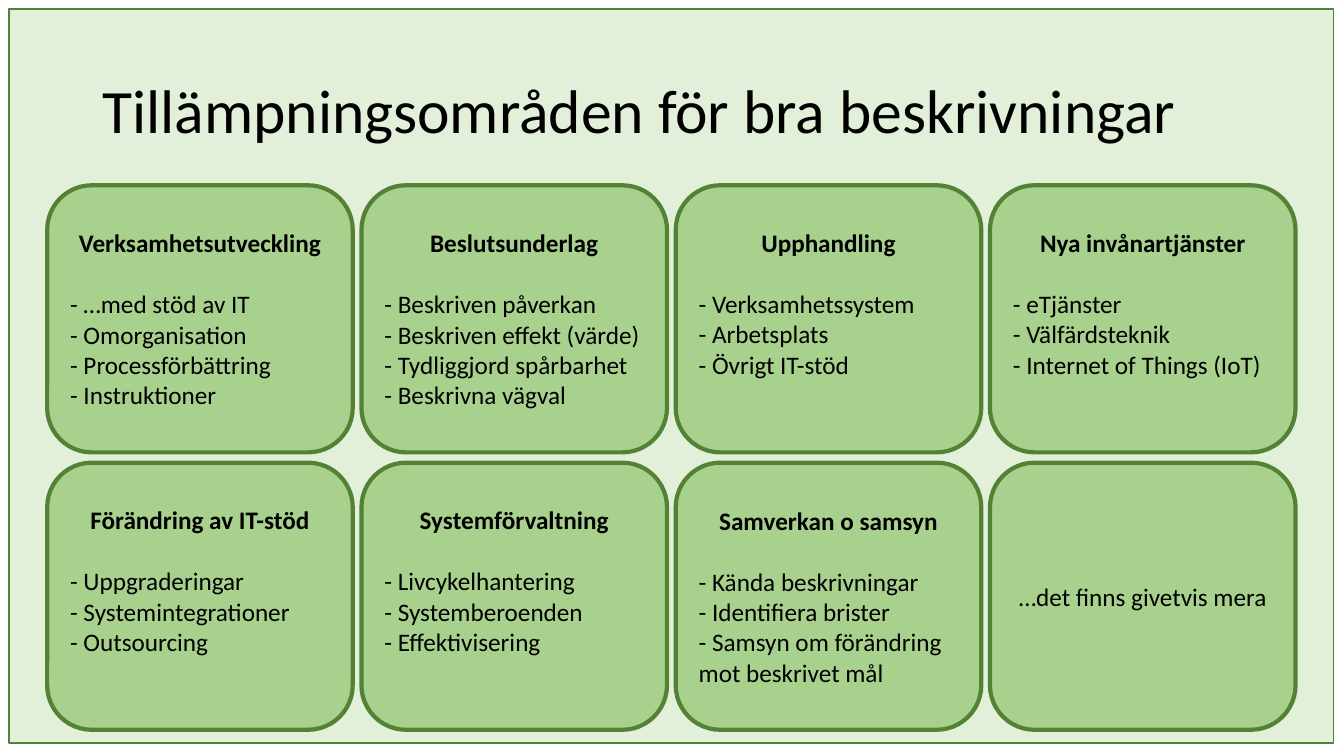
from dataclasses import dataclass

import pptx
import pptx.dml.color
import pptx.enum.shapes
import pptx.enum.text
import pptx.util
from pptx.dml.color import RGBColor
from pptx.enum.shapes import MSO_SHAPE
from pptx.enum.text import MSO_ANCHOR, PP_ALIGN
from pptx.util import Cm, Pt

PALE_GREEN = RGBColor(0xE2, 0xF0, 0xD9)
LIGHT_GREEN = RGBColor(0xA9, 0xD1, 0x8E)
DARK_GREEN = RGBColor(0x54, 0x82, 0x35)
BLACK = RGBColor(0x00, 0x00, 0x00)

FONT = "Calibri"
COLUMNS = 4
LEFT, TOP = 1.19, 4.67
BOX_WIDTH, BOX_HEIGHT = 7.7, 6.73
COLUMN_STEP, ROW_STEP = 7.92, 6.99
LINE_POINTS = 22
LINE_CM = 0.78
INSET_CM = 0.13


@dataclass(frozen=True)
class Area:
    heading: str
    items: tuple[str, ...] = ()
    spare_lines: int = 0
    bold: bool = True


AREAS = (
    Area("Verksamhetsutveckling",
         ("…med stöd av IT", "Omorganisation", "Processförbättring", "Instruktioner")),
    Area("Beslutsunderlag",
         ("Beskriven påverkan", "Beskriven effekt (värde)",
          "Tydliggjord spårbarhet", "Beskrivna vägval")),
    Area("Upphandling", ("Verksamhetssystem", "Arbetsplats", "Övrigt IT-stöd"), 1),
    Area("Nya invånartjänster",
         ("eTjänster", "Välfärdsteknik", "Internet of Things (IoT)"), 1),
    Area("Förändring av IT-stöd",
         ("Uppgraderingar", "Systemintegrationer", "Outsourcing"), 1),
    Area("Systemförvaltning",
         ("Livcykelhantering", "Systemberoenden", "Effektivisering"), 1),
    Area("Samverkan o samsyn",
         ("Kända beskrivningar", "Identifiera brister",
          "Samsyn om förändring mot beskrivet mål")),
    Area("…det finns givetvis mera", bold=False),
)


def add_run(paragraph: pptx.text.text._Paragraph, text: str, size: int,
            bold: bool = False) -> None:
    run = paragraph.add_run()
    run.text = text
    run.font.name = FONT
    run.font.size = Pt(size)
    run.font.bold = bold
    run.font.color.rgb = BLACK


def add_panel(slide: pptx.slide.Slide, kind: MSO_SHAPE, left: float, top: float,
              width: float, height: float, fill: RGBColor,
              line_width: float) -> pptx.shapes.autoshape.Shape:
    """Add a filled, outlined shape; lengths are in centimetres."""
    shape = slide.shapes.add_shape(kind, Cm(left), Cm(top), Cm(width), Cm(height))
    shape.shadow.inherit = False
    shape.fill.solid()
    shape.fill.fore_color.rgb = fill
    shape.line.color.rgb = DARK_GREEN
    shape.line.width = Pt(line_width)
    return shape


def add_title(slide: pptx.slide.Slide, text: str) -> None:
    box = slide.shapes.add_textbox(Cm(2.33), Cm(1.01), Cm(29.21), Cm(3.68))
    frame = box.text_frame
    frame.word_wrap = True
    frame.vertical_anchor = MSO_ANCHOR.MIDDLE
    paragraph = frame.paragraphs[0]
    paragraph.line_spacing = 0.9
    add_run(paragraph, text, 44)


def add_area(slide: pptx.slide.Slide, area: Area, position: int) -> None:
    row, column = divmod(position, COLUMNS)
    shape = add_panel(slide, MSO_SHAPE.ROUNDED_RECTANGLE,
                      LEFT + column * COLUMN_STEP, TOP + row * ROW_STEP,
                      BOX_WIDTH, BOX_HEIGHT, LIGHT_GREEN, 3)
    frame = shape.text_frame
    frame.word_wrap = True
    frame.vertical_anchor = MSO_ANCHOR.MIDDLE
    frame.margin_bottom = Cm(INSET_CM + area.spare_lines * LINE_CM)
    heading = frame.paragraphs[0]
    heading.alignment = PP_ALIGN.CENTER
    add_run(heading, area.heading, 18, area.bold)
    if area.items:
        heading.space_after = Pt(LINE_POINTS)
    for item in area.items:
        paragraph = frame.add_paragraph()
        paragraph.alignment = PP_ALIGN.LEFT
        add_run(paragraph, f"- {item}", 18)


def main() -> None:
    presentation = pptx.Presentation()
    presentation.slide_width = Cm(33.87)
    presentation.slide_height = Cm(19.05)
    slide = presentation.slides.add_slide(presentation.slide_layouts[6])
    add_panel(slide, MSO_SHAPE.RECTANGLE, 0.23, 0.23, 33.38, 18.49, PALE_GREEN, 1)
    add_title(slide, "Tillämpningsområden för bra beskrivningar")
    for position, area in enumerate(AREAS):
        add_area(slide, area, position)
    presentation.save("out.pptx")


if __name__ == "__main__":
    main()
